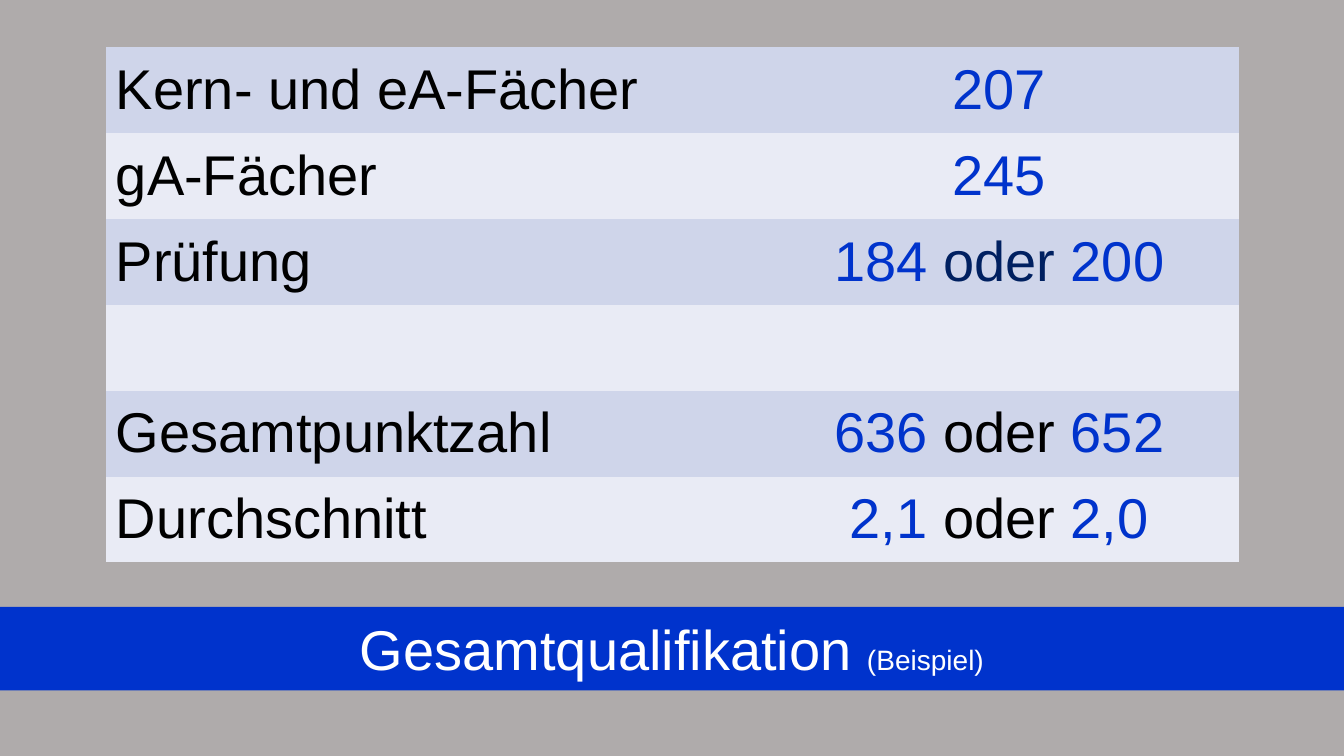
from dataclasses import dataclass

from pptx import Presentation
from pptx.dml.color import RGBColor
from pptx.enum.text import MSO_ANCHOR, MSO_AUTO_SIZE, PP_ALIGN
from pptx.oxml.ns import qn
from pptx.util import Pt

LEFT, CENTER = PP_ALIGN.LEFT, PP_ALIGN.CENTER
MIDDLE = MSO_ANCHOR.MIDDLE
NO_FIT = MSO_AUTO_SIZE.NONE
PLAIN = "{2D5ABB26-0587-4C30-8999-92F81FD0307C}"
SCALE = 9144


@dataclass(frozen=True)
class Theme:
    """Colours, font and type sizes of the slide."""
    font: str = "Arial"
    back: str = "AFABAB"
    blue: str = "0033CC"
    navy: str = "002060"
    black: str = "000000"
    white: str = "FFFFFF"
    bands: tuple = ("CFD5EA", "E9EBF5")
    large: int = 40
    small: int = 20


def px(n):
    """Turn px into EMU."""
    return n * SCALE


def paint(fill, tone):
    """Give a fill one solid colour."""
    fill.solid()
    fill.fore_color.rgb = RGBColor.from_string(tone)


class Deck:
    """Holds the theme and the current slide."""

    def __init__(self, theme, width, height):
        """Start a deck with one title-only slide."""
        self.theme = theme
        self.file = Presentation()
        self.file.slide_width, self.file.slide_height = px(width), px(height)
        self.slide = self.file.slides.add_slide(self.file.slide_layouts[5])
        paint(self.slide.background.fill, theme.back)

    def text(self, para, parts, align):
        """Fill a paragraph with (text, colour, size) runs."""
        para.alignment = align
        for words, tone, size in parts:
            run = para.add_run()
            run.text = words
            run.font.name = self.theme.font
            run.font.size = Pt(size)
            run.font.color.rgb = RGBColor.from_string(tone)

    def title(self, box, parts):
        """Turn the title placeholder into a coloured bar."""
        bar = self.slide.shapes.title
        bar.left, bar.top, bar.width, bar.height = map(px, box)
        paint(bar.fill, self.theme.blue)
        frame = bar.text_frame
        frame.auto_size = NO_FIT
        frame.word_wrap = True
        frame.vertical_anchor = MIDDLE
        frame.margin_left = frame.margin_right = px(10)
        frame.margin_top, frame.margin_bottom = px(12), px(5)
        para = frame.paragraphs[0]
        para.line_spacing = 0.9
        self.text(para, parts, CENTER)

    def table(self, box, widths, rows):
        """Add a banded table whose cells are lists of runs."""
        grid = self.slide.shapes.add_table(
            len(rows), len(widths), *map(px, box)).table
        grid.first_row = grid.horz_banding = False
        grid._tbl.tblPr.find(qn("a:tableStyleId")).text = PLAIN
        for col, width in zip(grid.columns, widths):
            col.width = px(width)
        for r, row in enumerate(rows):
            for c, parts in enumerate(row):
                cell = grid.cell(r, c)
                cell.vertical_anchor = MIDDLE
                paint(cell.fill, self.theme.bands[r % 2])
                self.text(cell.text_frame.paragraphs[0], parts,
                          CENTER if c else LEFT)


def main():
    """Build the slide and save it."""
    theme = Theme()
    deck = Deck(theme, 1333, 750)
    big = theme.large

    def row(label, first, other=None, tone=theme.black):
        """Make a label cell and a cell with one or two values."""
        parts = [(first, theme.blue, big)]
        if other:
            parts += [(" oder ", tone, big), (other, theme.blue, big)]
        return [(label, theme.black, big)], parts

    deck.title((0, 602, 1333, 83), [
        ("Gesamtqualifikation ", theme.white, big),
        ("(Beispiel)", theme.white, theme.small)])
    deck.table((105, 47, 1124, 511), (648, 476), [
        row("Kern- und eA-Fächer", "207"),
        row("gA-Fächer", "245"),
        row("Prüfung", "184", "200", theme.navy),
        ([], []),
        row("Gesamtpunktzahl", "636", "652"),
        row("Durchschnitt", "2,1", "2,0")])
    deck.file.save("out.pptx")


if __name__ == "__main__":
    main()
